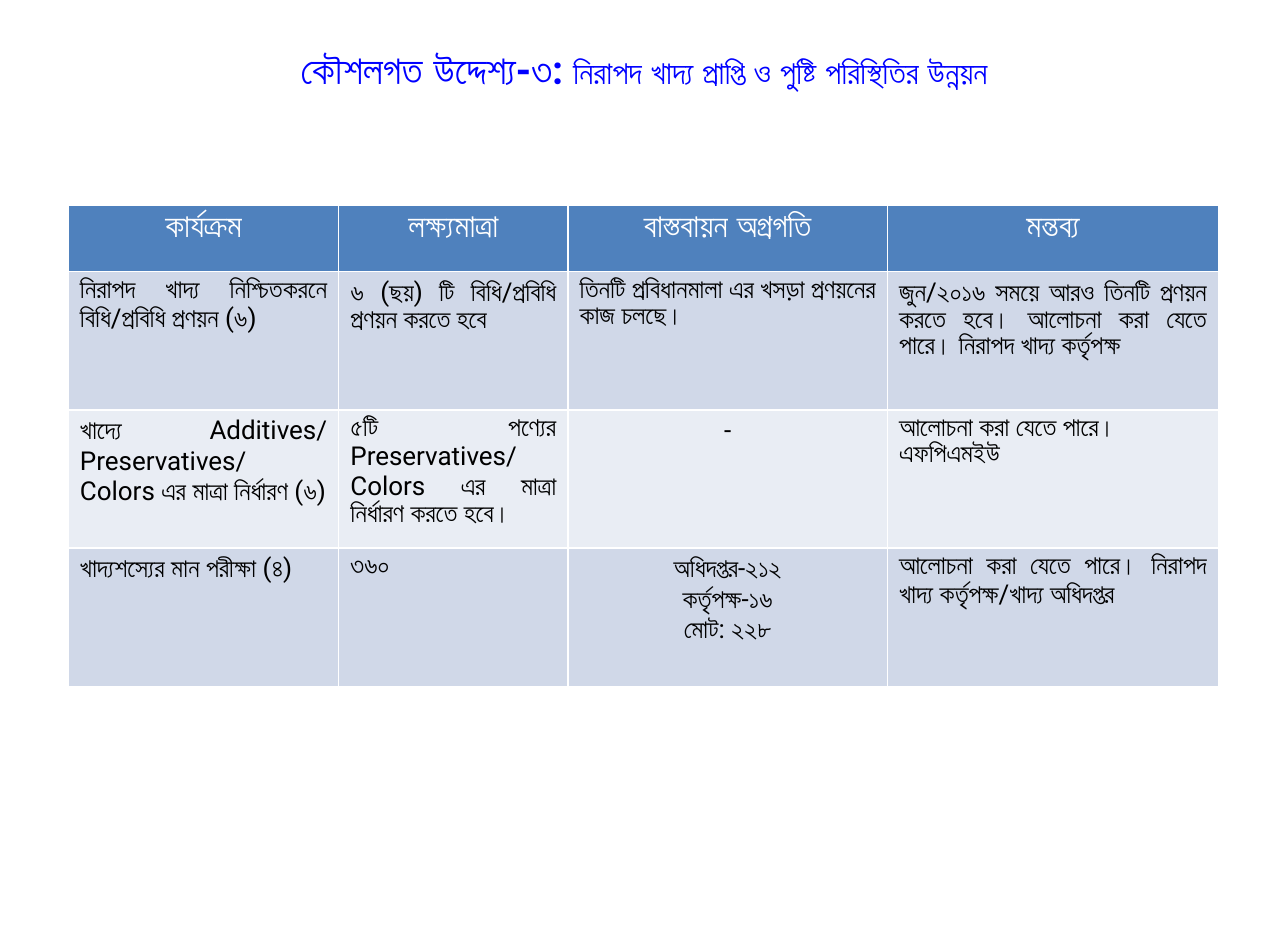
from dataclasses import dataclass

from pptx import Presentation
from pptx.dml.color import RGBColor
from pptx.enum.text import MSO_ANCHOR as Anchor, PP_ALIGN as Align
from pptx.slide import Slide
from pptx.util import Inches, Pt

WIDE, HIGH = 11, 8
COLS = (0.21, 0.178, 0.248, 0.257)
HEAD_ROW, BODY_ROW = 0.071, 0.1475
HEADS = ("কার্যক্রম", "লক্ষ্যমাত্রা", "বাস্তবায়ন অগ্রগতি", "মন্তব্য")
BANDS = ("D0D8E8", "E9EDF4")


@dataclass
class Task:
    name: str
    goal: str
    done: str
    note: str
    align: Align = Align.CENTER


TASKS = (
    Task("নিরাপদ খাদ্য নিশ্চিতকরনে বিধি/প্রবিধি প্রণয়ন (৬)",
         "৬ (ছয়) টি বিধি/প্রবিধি প্রণয়ন করতে হবে",
         "তিনটি প্রবিধানমালা এর খসড়া প্রণয়নের কাজ চলছে।",
         "জুন/২০১৬ সময়ে আরও তিনটি প্রণয়ন করতে হবে। আলোচনা করা যেতে পারে। নিরাপদ খাদ্য কর্তৃপক্ষ",
         Align.JUSTIFY),
    Task("খাদ্যে Additives/ Preservatives/ Colors এর মাত্রা নির্ধারণ (৬)",
         "৫টি পণ্যের Preservatives/ Colors এর মাত্রা নির্ধারণ করতে হবে।",
         "-",
         "আলোচনা করা যেতে পারে।\nএফপিএমইউ"),
    Task("খাদ্যশস্যের মান পরীক্ষা (৪)",
         "৩৬০",
         "অধিদপ্তর-২১২\nকর্তৃপক্ষ-১৬\nমোট: ২২৮",
         "আলোচনা করা যেতে পারে। নিরাপদ খাদ্য কর্তৃপক্ষ/খাদ্য অধিদপ্তর"),
)


def across(share: float) -> int:
    return Inches(WIDE * share)


def down(share: float) -> int:
    return Inches(HIGH * share)


def color(code: str) -> RGBColor:
    return RGBColor.from_string(code)


def write(para, text: str, *, size: float, ink: str = "000000", face: str = "Roboto",
          bold: bool = False, align: Align = Align.JUSTIFY) -> None:
    para.alignment = align
    run = para.add_run()
    run.text = text
    font = run.font
    font.size, font.name, font.bold = Pt(size), face, bold
    font.color.rgb = color(ink)


def fill(cell, text: str, back: str, **style) -> None:
    cell.fill.solid()
    cell.fill.fore_color.rgb = color(back)
    frame = cell.text_frame
    for i, line in enumerate(text.split("\n")):
        para = frame.add_paragraph() if i else frame.paragraphs[0]
        write(para, line, **style)


def add_title(slide: Slide) -> None:
    title = slide.shapes.title
    title.left, title.top = across(0.05), down(0.04)
    title.width, title.height = across(0.9), down(0.085)
    frame = title.text_frame
    frame.word_wrap = True
    frame.vertical_anchor = Anchor.MIDDLE
    frame.margin_bottom = Inches(0.2)
    para = frame.paragraphs[0]
    for text, size in (("কৌশলগত উদ্দেশ্য-৩: ", 24.3),
                       ("নিরাপদ খাদ্য প্রাপ্তি ও পুষ্টি পরিস্থিতির উন্নয়ন", 19.8)):
        write(para, text, size=size, ink="0000FF", bold=True, align=Align.CENTER)


def add_grid(slide: Slide) -> None:
    rows = (HEAD_ROW,) + (BODY_ROW,) * len(TASKS)
    grid = slide.shapes.add_table(len(rows), len(COLS), across(0.053), down(0.219),
                                  across(sum(COLS)), down(sum(rows))).table
    for col, share in zip(grid.columns, COLS):
        col.width = across(share)
    for row, share in zip(grid.rows, rows):
        row.height = down(share)
    for c, head in enumerate(HEADS):
        fill(grid.cell(0, c), head, "4F81BD", size=20, ink="FFFFFF", face="Arial",
             bold=True, align=Align.CENTER)
    for r, task in enumerate(TASKS):
        for c, text in enumerate((task.name, task.goal, task.done, task.note)):
            align = task.align if c == 2 else Align.JUSTIFY
            fill(grid.cell(r + 1, c), text, BANDS[r % 2], size=16, align=align)


def main() -> None:
    deck = Presentation()
    deck.slide_width, deck.slide_height = Inches(WIDE), Inches(HIGH)
    slide = deck.slides.add_slide(deck.slide_layouts[5])
    add_title(slide)
    add_grid(slide)
    deck.save("out.pptx")


if __name__ == "__main__":
    main()
